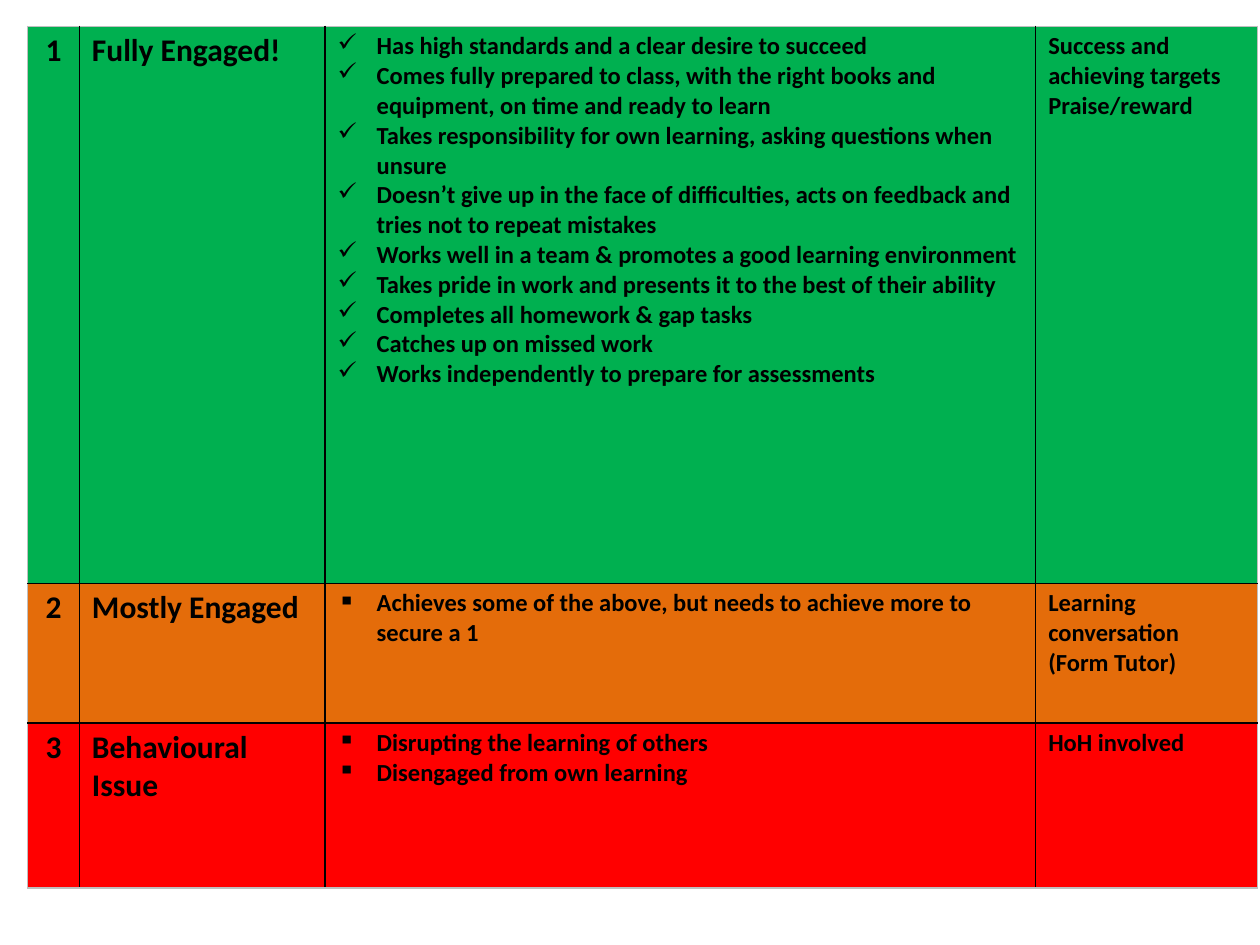
from dataclasses import dataclass

from lxml import etree
from pptx import Presentation
from pptx.dml.color import RGBColor
from pptx.enum import text
from pptx.oxml import ns
from pptx.util import Inches, Pt

FONT = "Calibri"
BLACK, GREY = "000000", "BFBFBF"
COLUMN_WIDTHS = [0.41, 1.95, 5.64, 1.76]
LEFT, TOP = 0.22, 0.21
HANGING = 0.31


@dataclass
class Level:
    number: str
    name: str
    bullet: str
    behaviours: list[str]
    outcomes: list[str]
    colour: str
    height: float


LEVELS = [
    Level("1", "Fully Engaged!", "✓", [
        "Has high standards and a clear desire to succeed",
        "Comes fully prepared to class, with the right books and equipment, "
        "on time and ready to learn",
        "Takes responsibility for own learning, asking questions when unsure",
        "Doesn’t give up in the face of difficulties, acts on feedback and "
        "tries not to repeat mistakes",
        "Works well in a team & promotes a good learning environment",
        "Takes pride in work and presents it to the best of their ability",
        "Completes all homework & gap tasks",
        "Catches up on missed work",
        "Works independently to prepare for assessments",
    ], ["Success and achieving targets", "Praise/reward"], "00B050", 4.42),
    Level("2", "Mostly Engaged", "▪", [
        "Achieves some of the above, but needs to achieve more to secure a 1",
    ], ["Learning conversation (Form Tutor)"], "E46C0A", 1.11),
    Level("3", "Behavioural Issue", "▪", [
        "Disrupting the learning of others",
        "Disengaged from own learning",
    ], ["HoH involved"], "FF0000", 1.31),
]


def rgb(value: str) -> RGBColor:
    return RGBColor.from_string(value)


def set_all(target, values: dict) -> None:
    for name, value in values.items():
        setattr(target, name, value)


def add_bullet(para, symbol: str) -> None:
    properties = para._p.get_or_add_pPr()
    properties.set("marL", str(Inches(HANGING)))
    properties.set("indent", str(-Inches(HANGING)))
    etree.SubElement(properties, ns.qn("a:buChar")).set("char", symbol)


def set_borders(cell, colours: dict[str, str]) -> None:
    """Borders go before the fill, in the order L, R, T, B."""
    properties = cell._tc.get_or_add_tcPr()
    for position, (side, colour) in enumerate(colours.items()):
        line = etree.Element(ns.qn(f"a:ln{side}"), w=str(Pt(1)))
        solid = etree.SubElement(line, ns.qn("a:solidFill"))
        etree.SubElement(solid, ns.qn("a:srgbClr")).set("val", colour)
        properties.insert(position, line)


def fill_cell(cell, lines: list[str], size: int, colour: str,
              bullet: str = "", centred: bool = False) -> None:
    set_all(cell, {"margin_left": Inches(0.1), "margin_right": Inches(0.1),
                   "margin_top": Inches(0.04), "margin_bottom": Inches(0.04)})
    cell.fill.solid()
    cell.fill.fore_color.rgb = rgb(colour)
    frame = cell.text_frame
    for index, line in enumerate(lines):
        para = frame.add_paragraph() if index else frame.paragraphs[0]
        if centred:
            para.alignment = text.PP_ALIGN.CENTER
        if bullet:
            add_bullet(para, bullet)
        span = para.add_run()
        span.text = line
        set_all(span.font, {"name": FONT, "size": Pt(size), "bold": True})
        span.font.color.rgb = rgb(BLACK)


def add_level_table(page, levels: list[Level]) -> None:
    last_row, last_column = len(levels) - 1, len(COLUMN_WIDTHS) - 1
    table = page.shapes.add_table(
        len(levels), len(COLUMN_WIDTHS), Inches(LEFT), Inches(TOP),
        Inches(sum(COLUMN_WIDTHS)),
        Inches(sum(level.height for level in levels))).table
    set_all(table, {"first_row": False, "horz_banding": False})
    for column, width in zip(table.columns, COLUMN_WIDTHS):
        column.width = Inches(width)

    for r, level in enumerate(levels):
        table.rows[r].height = Inches(level.height)
        cells = list(table.rows[r].cells)
        fill_cell(cells[0], [level.number], 18, level.colour, centred=True)
        fill_cell(cells[1], [level.name], 18, level.colour)
        fill_cell(cells[2], level.behaviours, 14, level.colour, level.bullet)
        fill_cell(cells[3], level.outcomes, 14, level.colour)
        # Grey outer frame, black inner rules
        for c, cell in enumerate(cells):
            set_borders(cell, {
                "L": BLACK if c else GREY,
                "R": BLACK if c < last_column else GREY,
                "T": BLACK if r else GREY,
                "B": BLACK if r < last_row else GREY,
            })


def main() -> None:
    deck = Presentation()
    set_all(deck, {"slide_width": Inches(10), "slide_height": Inches(7.5)})
    page = deck.slides.add_slide(deck.slide_layouts[6])
    add_level_table(page, LEVELS)
    deck.save("out.pptx")


if __name__ == "__main__":
    main()
